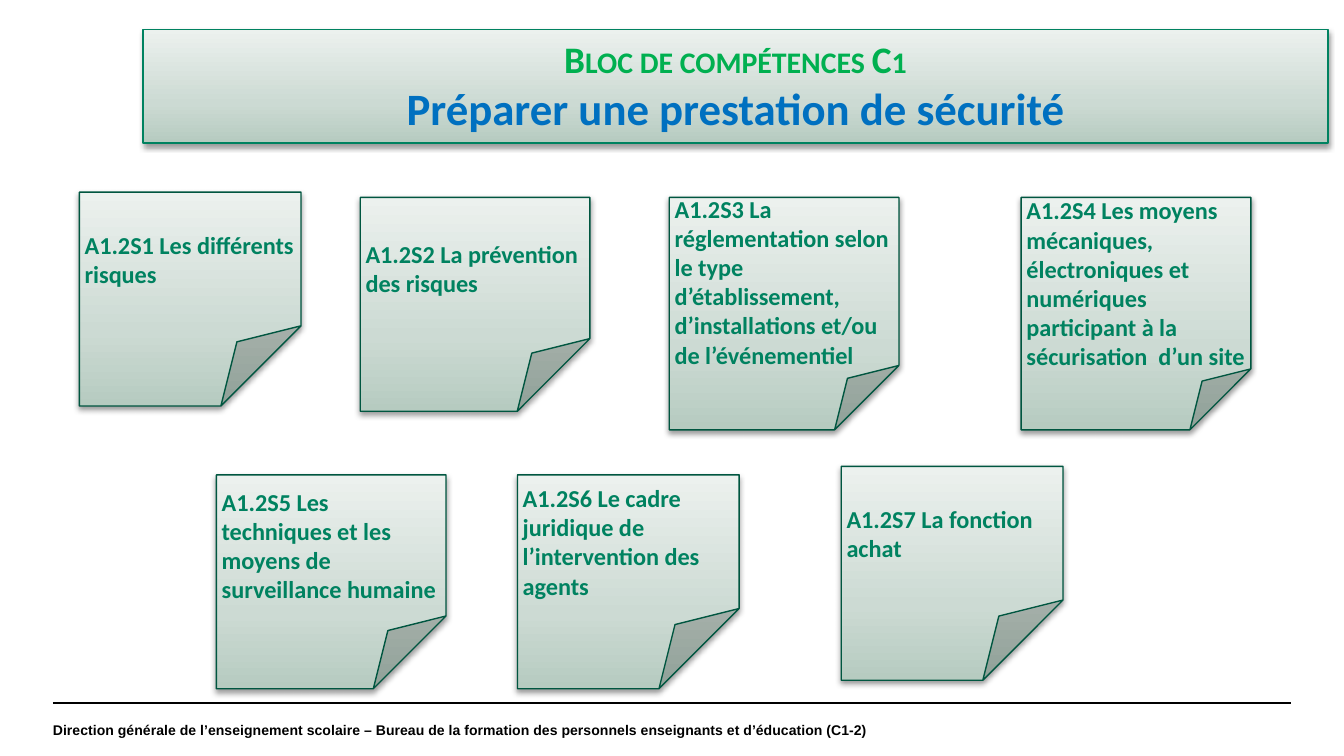
from copy import deepcopy

from lxml.etree import SubElement
from pptx import Presentation
from pptx.dml.color import RGBColor
from pptx.enum.shapes import MSO_CONNECTOR, MSO_SHAPE
from pptx.enum.text import MSO_ANCHOR, MSO_AUTO_SIZE, PP_ALIGN
from pptx.oxml.ns import qn
from pptx.util import Cm, Pt

BLOCK = "Bloc de compétences C1"
HEADING = "Préparer une prestation de sécurité"
FOOTER = (
    "Direction générale de l’enseignement scolaire – Bureau de la formation "
    "des personnels enseignants et d’éducation (C1-2)"
)

NARROW, WIDE = 4.19, 4.34
SHORT, TALL = 4.04, 4.39
CARDS = [
    ("A1.2S1 Les différents risques", 1.5, 3.63, NARROW, SHORT, 0.375),
    ("A1.2S2 La prévention des risques", 6.81, 3.73, WIDE, SHORT, 0.34),
    ("A1.2S3 La réglementation selon le type d’établissement, "
     "d’installations et/ou de l’événementiel", 12.65, 3.73, WIDE, TALL, 0.28),
    ("A1.2S4 Les moyens mécaniques, électroniques et numériques "
     "participant à la sécurisation  d’un site", 19.3, 3.73, WIDE, TALL, 0.265),
    ("A1.2S5 Les techniques et les moyens de surveillance humaine",
     4.09, 8.97, WIDE, SHORT, 0.34),
    ("A1.2S6 Le cadre juridique de l’intervention des agents",
     9.78, 8.97, NARROW, SHORT, 0.375),
    ("A1.2S7 La fonction achat", 15.9, 8.81, NARROW, SHORT, 0.375),
]

GRADIENT = [(0, "B6CBC0"), (0.35, "CCDAD3"), (1, "ECF1EE")]
GREEN, DARK_GREEN, BLACK = "008260", "005640", "000000"
MARGIN, RULE_TOP, RULE_RIGHT = 1, 13.28, 24.4


def rgb(color):
    return RGBColor.from_string(color)


def write(paragraph, text, size, color, font="Calibri", align=PP_ALIGN.LEFT,
          small_caps=False):
    paragraph.alignment = align
    run = paragraph.add_run()
    run.text = text
    run.font.name = font
    run.font.size = Pt(size)
    run.font.bold = True
    run.font.color.rgb = rgb(color)
    if small_caps:
        run.font._element.set("cap", "small")


def set_frame(frame, inset):
    frame.word_wrap = True
    frame.vertical_anchor = MSO_ANCHOR.MIDDLE
    frame.margin_left = frame.margin_right = Cm(inset)
    frame.margin_top = frame.margin_bottom = Cm(inset)


def add_panel(slide, preset, left, top, width, height, border):
    panel = slide.shapes.add_shape(
        preset, Cm(left), Cm(top), Cm(width), Cm(height))
    panel.fill.gradient()
    panel.fill.gradient_angle = 90
    properties = panel._element.spPr
    stop_list = properties.find(".//" + qn("a:gsLst"))
    stop_list.append(deepcopy(stop_list[0]))
    for stop, (position, color) in zip(panel.fill.gradient_stops, GRADIENT):
        stop.position = position
        stop.color.rgb = rgb(color)
    panel.line.color.rgb = rgb(border)
    panel.line.width = Pt(0.75)

    panel.shadow.inherit = False
    effects = properties.find(qn("a:effectLst"))
    shadow = SubElement(
        effects, qn("a:outerShdw"), blurRad=str(Pt(3.1)), dist=str(Pt(1.6)),
        dir="5400000", rotWithShape="0")
    shade = SubElement(shadow, qn("a:srgbClr"), val=BLACK)
    SubElement(shade, qn("a:alpha"), val="38000")
    return panel


def add_footer(slide):
    rule = slide.shapes.add_connector(
        MSO_CONNECTOR.STRAIGHT,
        Cm(MARGIN), Cm(RULE_TOP), Cm(RULE_RIGHT), Cm(RULE_TOP))
    rule.line.color.rgb = rgb(BLACK)
    rule.line.width = Pt(0.8)
    SubElement(rule._element.spPr, qn("a:effectLst"))

    footer = slide.shapes.add_textbox(
        Cm(MARGIN), Cm(RULE_TOP), Cm(23.7), Cm(1)).text_frame
    set_frame(footer, 0)
    write(footer.paragraphs[0], FOOTER, 7.5, BLACK, font="Arial")


def add_card(slide, skill, left, top, width, height, fold):
    card = add_panel(slide, MSO_SHAPE.FOLDED_CORNER,
                     left, top, width, height, DARK_GREEN)
    guides = card._element.spPr.find(".//" + qn("a:avLst"))
    SubElement(guides, qn("a:gd"), name="adj", fmla=f"val {round(fold * 100000)}")
    set_frame(card.text_frame, 0.1)
    write(card.text_frame.paragraphs[0], skill, 13, GREEN)


def add_title(slide):
    title = add_panel(slide, MSO_SHAPE.RECTANGLE,
                      2.7, 0.56, 22.4, 2.14, GREEN).text_frame
    title.word_wrap = True
    title.vertical_anchor = MSO_ANCHOR.TOP
    title.auto_size = MSO_AUTO_SIZE.SHAPE_TO_FIT_TEXT
    write(title.paragraphs[0], BLOCK, 20, "00B050",
          align=PP_ALIGN.CENTER, small_caps=True)
    write(title.add_paragraph(), HEADING, 24, "0070C0", align=PP_ALIGN.CENTER)


def main():
    deck = Presentation()
    deck.slide_width, deck.slide_height = Cm(25.4), Cm(14.28)
    slide = deck.slides.add_slide(deck.slide_layouts[6])
    add_footer(slide)
    for card in CARDS:
        add_card(slide, *card)
    add_title(slide)
    deck.save("out.pptx")


if __name__ == "__main__":
    main()
